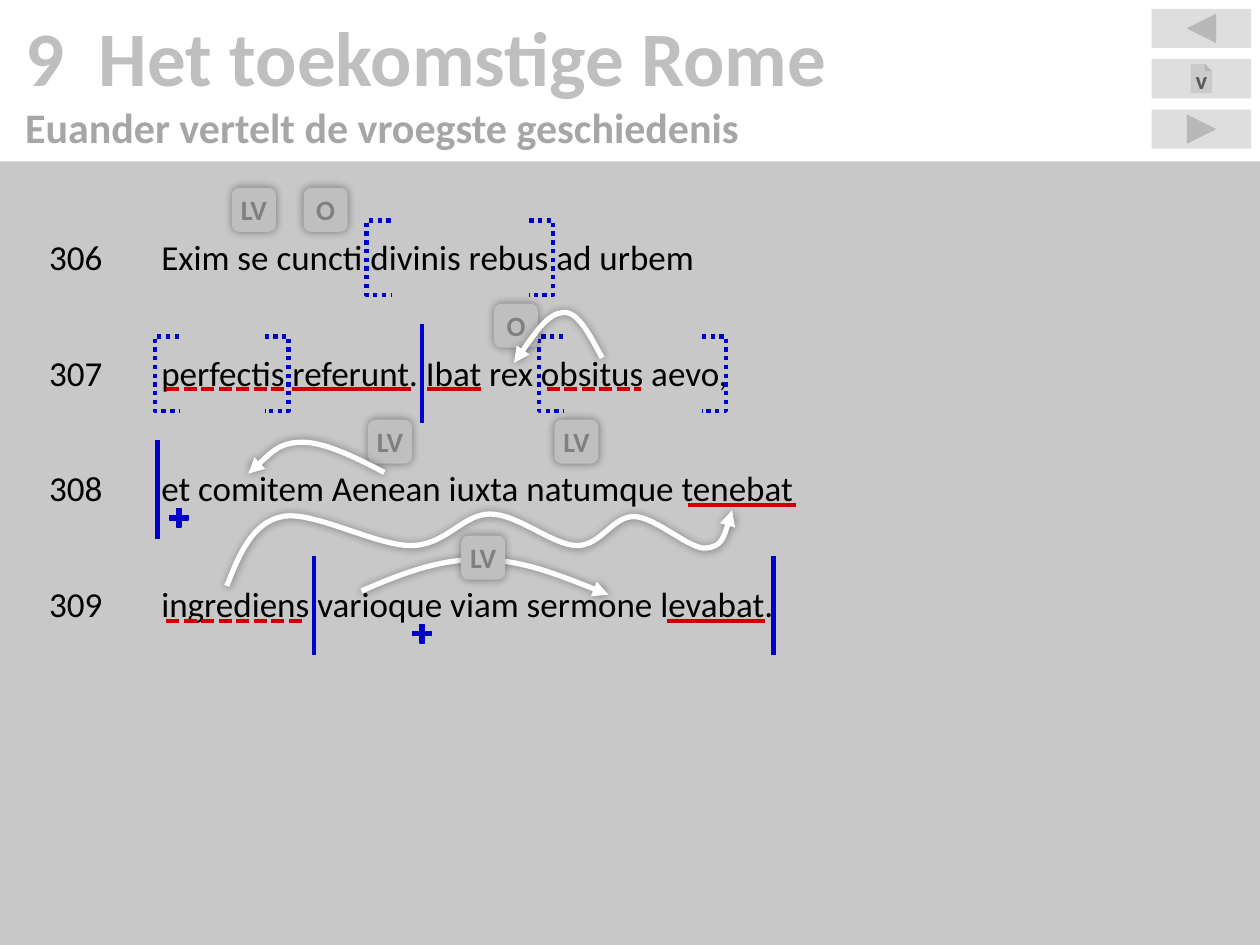
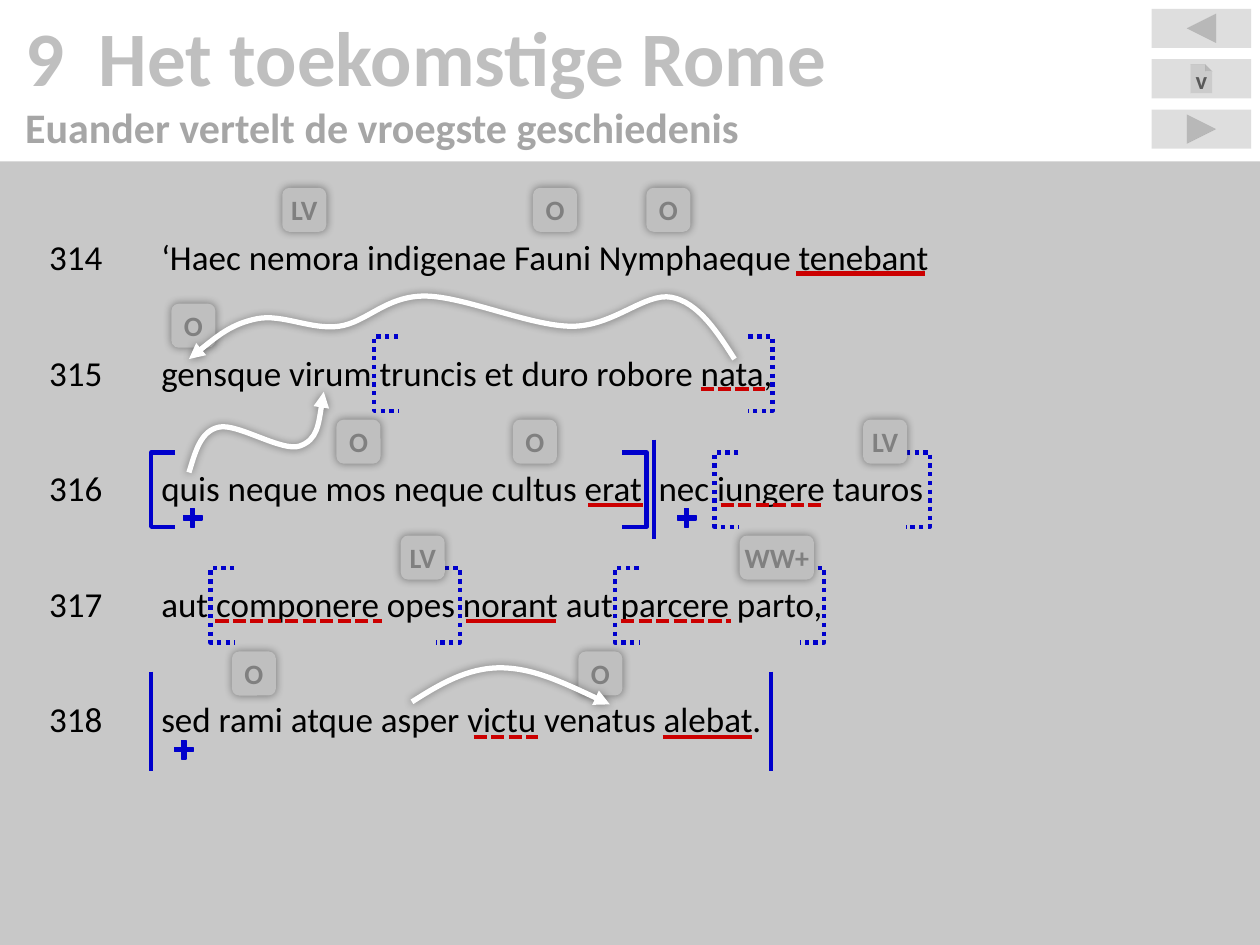
from dataclasses import dataclass

from lxml import etree
from pptx import Presentation
from pptx import util as u
from pptx.dml.color import RGBColor
from pptx.enum import dml, shapes, text
from pptx.oxml.ns import qn

PX = 9144  # EMU in one px; the slide is 1000 px wide
ROW = 92  # distance between verses; the tops below are those of the first verse
BADGE_TOP, BAR_TOP, BRACKET_TOP, UNDERLINE_TOP = 149, 165, 175, 217


@dataclass(frozen=True)
class Theme:
    font: str = "Calibri"
    title: str = "BFBFBF"
    subtitle: str = "A6A6A6"
    panel: str = "BFBFBF"
    verse: str = "000000"
    badge_text: str = "808080"
    button_text: str = "595959"
    clause: str = "0000CC"
    verb: str = "CC0000"
    arrow: str = "FFFFFF"
    title_size: int = 44
    subtitle_size: int = 24
    verse_size: int = 20
    badge_size: int = 16
    button_size: int = 14
    mark_width: float = 2.5
    arrow_width: float = 3


@dataclass(frozen=True)
class Verse:
    """A verse line and the horizontal places of the marks that belong to it."""
    words: str
    verbs: tuple = ()
    participles: tuple = ()
    bars: tuple = ()
    dotted_brackets: tuple = ()
    solid_brackets: tuple = ()
    pluses: tuple = ()
    badges: tuple = ()
    top_badges: tuple = ()


theme = Theme()
DASHED = dml.MSO_LINE.SQUARE_DOT
DOTTED = dml.MSO_LINE.ROUND_DOT

TITLE = [
    ("9  Het toekomstige Rome", theme.title_size, theme.title),
    ("Euander vertelt de vroegste geschiedenis", theme.subtitle_size, theme.subtitle),
]
BUTTONS = [
    (shapes.MSO_SHAPE.ACTION_BUTTON_BACK_OR_PREVIOUS, ""),
    (shapes.MSO_SHAPE.ACTION_BUTTON_DOCUMENT, "v"),
    (shapes.MSO_SHAPE.ACTION_BUTTON_FORWARD_OR_NEXT, ""),
]

# first verse number, verses, points that each arrow passes through
PAGES = [
    (306, [
        Verse("Exim se cuncti divinis rebus ad urbem",
              dotted_brackets=((291, 439),), badges=(("O", 241), ("LV", 184))),
        Verse("perfectis referunt. Ibat rex obsitus aevo,",
              verbs=((232, 326), (339, 382)), participles=((132, 225), (434, 509)),
              bars=(335,), dotted_brackets=((123, 229), (428, 576)),
              badges=(("O", 392),)),
        Verse("et comitem Aenean iuxta natumque tenebat",
              verbs=((546, 632),), bars=(125,), pluses=(132,),
              badges=(("LV", 292), ("LV", 440))),
        Verse("ingrediens varioque viam sermone levabat.",
              verbs=((529, 607),), participles=((132, 242),),
              bars=(249, 614), pluses=(325,), top_badges=(("LV", 366),)),
    ], [
        [(478, 284), (447, 248), (408, 288)],
        [(305, 375), (240, 351), (197, 376)],
        [(180, 465), (224, 410), (326, 433), (389, 408),
         (458, 433), (503, 410), (560, 435), (581, 405)],
        [(287, 469), (380, 444), (483, 472)],
    ]),
    (314, [
        Verse("‘Haec nemora indigenae Fauni Nymphaeque tenebant",
              verbs=((632, 734),), badges=(("LV", 224), ("O", 423), ("O", 513))),
        Verse("gensque virum truncis et duro robore nata,",
              participles=((556, 607),), dotted_brackets=((297, 613),),
              badges=(("O", 136),)),
        Verse("quis neque mos neque cultus erat, nec iungere tauros",
              verbs=((467, 510),), participles=((572, 654),), bars=(519,),
              dotted_brackets=((567, 738),), solid_brackets=((120, 513),),
              pluses=(143, 535), badges=(("LV", 685), ("O", 267), ("O", 407))),
        Verse("aut componere opes norant aut parcere parto,",
              verbs=((370, 441),), participles=((171, 303), (493, 580)),
              dotted_brackets=((167, 365), (488, 654)),
              badges=(("LV", 318), ("WW+", 587))),
        Verse("sed rami atque asper victu venatus alebat.",
              verbs=((526, 597),), participles=((376, 427),),
              bars=(120, 612), pluses=(136,), badges=(("O", 184), ("O", 459))),
    ], [
        [(583, 285), (533, 236), (454, 259), (337, 235), (269, 259),
         (204, 253), (150, 285)],
        [(150, 375), (174, 339), (238, 354), (257, 311)],
        [(327, 557), (397, 530), (484, 559)],
    ]),
]


def paint(shape, fill=None, opacity=100, line=None, width=theme.mark_width,
          dash=None, glow=False):
    """Set fill, outline and soft shadow of a shape or connector."""
    properties = shape._element.spPr
    if fill:
        shape.fill.solid()
        shape.fill.fore_color.rgb = RGBColor.from_string(fill)
        if opacity < 100:
            color = properties.find(qn("a:solidFill"))[0]
            etree.SubElement(color, qn("a:alpha"), val=str(opacity * 1000))
    elif hasattr(shape, "fill"):
        shape.fill.background()
    if line:
        shape.line.color.rgb = RGBColor.from_string(line)
        shape.line.width = u.Pt(width)
        if dash:
            shape.line.dash_style = dash
    else:
        shape.line.fill.background()
    effects = etree.SubElement(properties, qn("a:effectLst"))
    if glow:
        shadow = etree.SubElement(effects, qn("a:outerShdw"), blurRad=str(u.Pt(5)),
                                  dist="0", dir="0", algn="ctr", rotWithShape="0")
        black = etree.SubElement(shadow, qn("a:srgbClr"), val="000000")
        etree.SubElement(black, qn("a:alpha"), val="40000")


def add_run(paragraph, words, size, color, bold=True):
    run = paragraph.add_run()
    run.text = words
    run.font.name = theme.font
    run.font.size = u.Pt(size)
    run.font.bold = bold
    run.font.color.rgb = RGBColor.from_string(color)


presentation = Presentation()
presentation.slide_width, presentation.slide_height = 1000 * PX, 750 * PX
title_only = presentation.slide_layouts[5]

for first_number, verses, arrows in PAGES:
    slide = presentation.slides.add_slide(title_only)
    canvas = slide.shapes

    title = canvas.title
    title.left, title.top, title.width, title.height = 0, 0, 1000 * PX, 128 * PX
    frame = title.text_frame
    frame.auto_size = text.MSO_AUTO_SIZE.NONE
    frame.vertical_anchor = text.MSO_ANCHOR.MIDDLE
    frame.margin_left = frame.margin_right = 20 * PX
    frame.margin_top = frame.margin_bottom = 20 * PX
    for index, (words, size, color) in enumerate(TITLE):
        paragraph = frame.add_paragraph() if index else frame.paragraphs[0]
        paragraph.alignment = text.PP_ALIGN.LEFT
        add_run(paragraph, words, size, color)

    panel = canvas.add_shape(shapes.MSO_SHAPE.RECTANGLE, 0, 128 * PX, 1000 * PX, 622 * PX)
    paint(panel, theme.panel, opacity=85)
    frame = panel.text_frame
    frame.word_wrap = True
    frame.vertical_anchor = text.MSO_ANCHOR.TOP
    frame.margin_left = frame.margin_right = 39 * PX
    frame.margin_top = frame.margin_bottom = 59 * PX
    for index, verse in enumerate(verses):
        paragraph = frame.add_paragraph() if index else frame.paragraphs[0]
        paragraph.alignment = text.PP_ALIGN.LEFT
        paragraph.space_after = u.Pt(42)
        tabs = etree.SubElement(paragraph._p.get_or_add_pPr(), qn("a:tabLst"))
        etree.SubElement(tabs, qn("a:tab"), pos=str(89 * PX), algn="l")
        add_run(paragraph, f"{first_number + index}\t{verse.words}",
                theme.verse_size, theme.verse, bold=False)

    for index, (kind, label) in enumerate(BUTTONS):
        button = canvas.add_shape(kind, 914 * PX, (7 + 40 * index) * PX, 79 * PX, 31 * PX)
        paint(button, theme.panel, opacity=50)
        if label:
            button.text_frame.vertical_anchor = text.MSO_ANCHOR.TOP
            paragraph = button.text_frame.paragraphs[0]
            paragraph.alignment = text.PP_ALIGN.CENTER
            add_run(paragraph, label, theme.button_size, theme.button_text)

    badges, top_badges = [], []
    for index, verse in enumerate(verses):
        shift = ROW * index
        y = UNDERLINE_TOP + shift
        top = BAR_TOP + shift
        strokes = [(left, y, right, y, theme.verb, None) for left, right in verse.verbs]
        strokes += [(left, y, right, y, theme.verb, DASHED)
                    for left, right in verse.participles]
        strokes += [(x, top, x, top + 79, theme.clause, None) for x in verse.bars]
        for x1, y1, x2, y2, color, dash in strokes:
            stroke = canvas.add_connector(shapes.MSO_CONNECTOR.STRAIGHT,
                                          x1 * PX, y1 * PX, x2 * PX, y2 * PX)
            paint(stroke, line=color, dash=dash)

        top = BRACKET_TOP + shift
        for pairs, dash in ((verse.dotted_brackets, DOTTED), (verse.solid_brackets, None)):
            for left, right in pairs:
                for x, inner in ((left, left + 19), (right, right - 19)):
                    builder = canvas.build_freeform(inner, top, scale=PX)
                    builder.add_line_segments([(x, top), (x, top + 59), (inner, top + 59)],
                                              close=False)
                    paint(builder.convert_to_shape(), line=theme.clause, dash=dash)

        for left in verse.pluses:
            plus = canvas.add_shape(shapes.MSO_SHAPE.MATH_PLUS,
                                    left * PX, y * PX, 20 * PX, 20 * PX)
            plus.adjustments[0] = 0.17
            paint(plus, theme.clause, line=theme.clause, width=0)

        top = BADGE_TOP + shift
        badges += [(label, left, top) for label, left in verse.badges]
        top_badges += [(label, left, top) for label, left in verse.top_badges]

    overlays = badges + [("arrow", points) for points in arrows] + top_badges
    for label, *place in overlays:
        if label == "arrow":
            points = place[0]
            # Handles at a bend follow the line between its two neighbours.
            handles = [((after[0] - before[0]) / 6, (after[1] - before[1]) / 6)
                       for before, after in zip(points, points[2:])]
            arriving = [(x - dx, y - dy) for (x, y), (dx, dy) in zip(points[1:], handles)]
            leaving = [(x + dx, y + dy) for (x, y), (dx, dy) in zip(points[1:], handles)]
            (x1, y1), (x2, y2) = points[0], arriving[0]
            leaving.insert(0, ((x1 + x2) / 2, (y1 + y2) / 2))
            (x1, y1), (x2, y2) = points[-1], leaving[-1]
            arriving.append(((x1 + x2) / 2, (y1 + y2) / 2))

            builder = canvas.build_freeform(*points[0], scale=PX)
            for triple in zip(leaving, arriving, points[1:]):
                builder.add_line_segments([(round(x), round(y)) for x, y in triple],
                                          close=False)
            arrow = builder.convert_to_shape()
            # Each three segments hold two handles and an end point.
            outline = arrow._element.find(".//" + qn("a:path"))
            segments = outline.findall(qn("a:lnTo"))
            for first in range(0, len(segments), 3):
                curve = etree.SubElement(outline, qn("a:cubicBezTo"))
                for segment in segments[first:first + 3]:
                    curve.append(segment[0])
                    outline.remove(segment)
            paint(arrow, line=theme.arrow, width=theme.arrow_width, glow=True)
            etree.SubElement(arrow._element.spPr.find(qn("a:ln")),
                             qn("a:tailEnd"), type="triangle")
        else:
            left, top = place
            width = 35 if len(label) < 3 else 59
            badge = canvas.add_shape(shapes.MSO_SHAPE.ROUNDED_RECTANGLE,
                                     left * PX, top * PX, width * PX, 35 * PX)
            paint(badge, theme.panel, glow=True)
            frame = badge.text_frame
            frame.margin_left = frame.margin_right = 0
            frame.margin_top = frame.margin_bottom = 0
            frame.vertical_anchor = text.MSO_ANCHOR.MIDDLE
            paragraph = frame.paragraphs[0]
            paragraph.alignment = text.PP_ALIGN.CENTER
            add_run(paragraph, label, theme.badge_size, theme.badge_text)

presentation.save("out.pptx")
